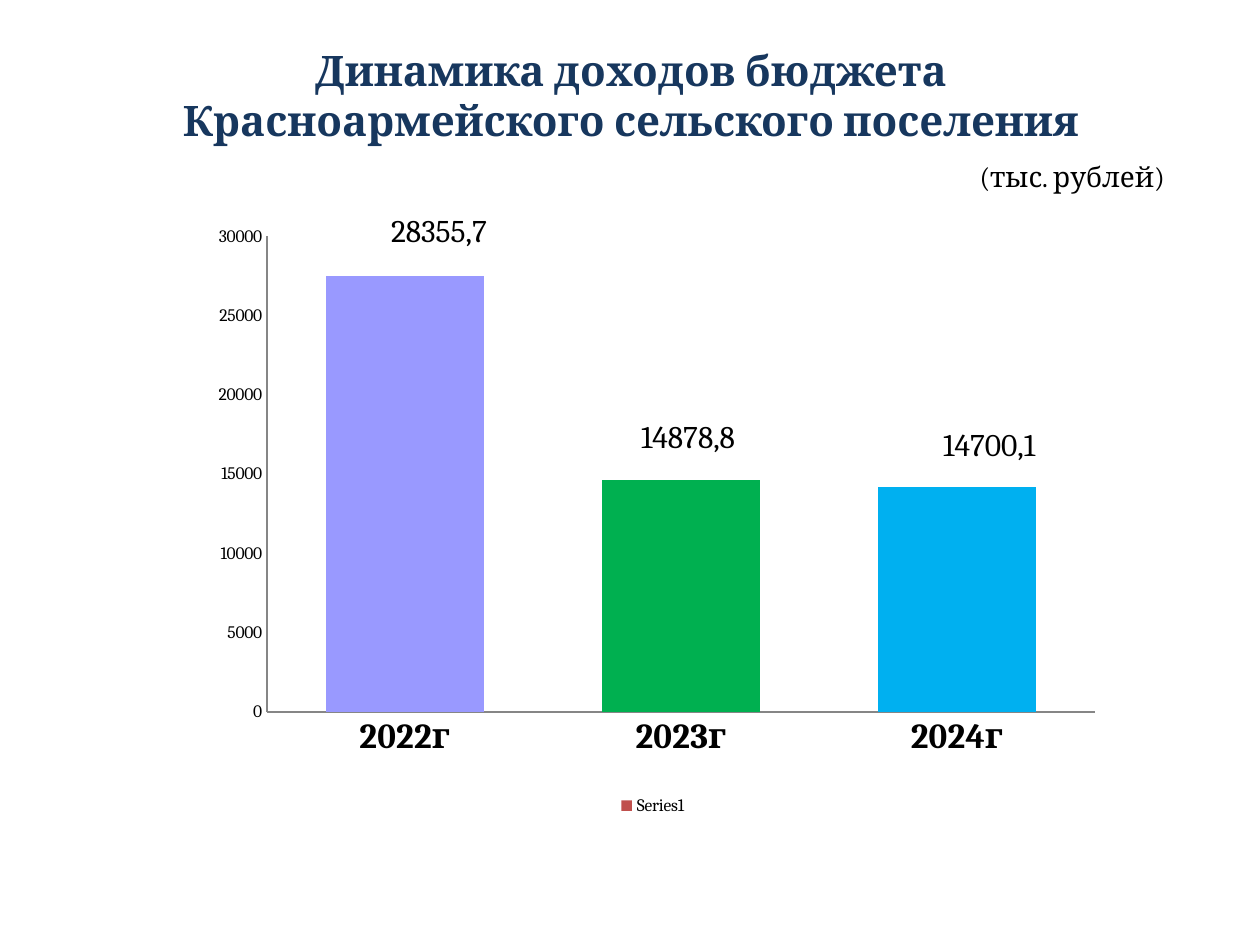
from lxml import etree
from pptx import Presentation
from pptx.chart.data import CategoryChartData
from pptx.dml.color import RGBColor
from pptx.enum.chart import XL_CHART_TYPE, XL_LABEL_POSITION, XL_LEGEND_POSITION, XL_TICK_MARK
from pptx.enum.text import MSO_ANCHOR, MSO_AUTO_SIZE, PP_ALIGN
from pptx.oxml.ns import qn
from pptx.util import Pt

COLUMN = XL_CHART_TYPE.COLUMN_CLUSTERED
OUTSIDE_END = XL_LABEL_POSITION.OUTSIDE_END
BOTTOM = XL_LEGEND_POSITION.BOTTOM
NO_TICK = XL_TICK_MARK.NONE
MIDDLE = MSO_ANCHOR.MIDDLE
NO_FIT = MSO_AUTO_SIZE.NONE
CENTER, RIGHT = PP_ALIGN.CENTER, PP_ALIGN.RIGHT

FONT = "Cambria"
NAVY = RGBColor(0x17, 0x37, 0x5E)
BLACK = RGBColor(0, 0, 0)
GREY = RGBColor(0x86, 0x86, 0x86)
RED = RGBColor(0xC0, 0x50, 0x4D)
VIOLET = RGBColor(0x99, 0x99, 0xFF)
GREEN = RGBColor(0x00, 0xB0, 0x50)
BLUE = RGBColor(0x00, 0xB0, 0xF0)

CHART_W, CHART_H = 893, 615

# Year, value, label text, bar colour, label shift in px
YEARS = [
    ("2022г", 27500, "28355,7", VIOLET, (34, -20)),
    ("2023г", 14600, "14878,8", GREEN, (7, -19)),
    ("2024г", 14200, "14700,1", BLUE, (32, -17)),
]


def px(n):
    return round(n * 914400 / 126)


def style_font(font, size, color=BLACK, bold=False):
    font.name = FONT
    font.size = Pt(size)
    font.bold = bold
    font.color.rgb = color


def write(p, text, size, color=BLACK, bold=False, align=CENTER, before=0):
    p.text = text
    p.alignment = align
    p.space_before = Pt(before)
    for r in p.runs:
        style_font(r.font, size, color, bold)


def chart_layout(x, y, w=None, h=None, **modes):
    """Manual layout from px lengths, stored as shares of the chart."""
    values = dict(modes, x=x / CHART_W, y=y / CHART_H)
    if w and h:
        values.update(w=w / CHART_W, h=h / CHART_H)
    layout = etree.Element(qn("c:layout"))
    manual = etree.SubElement(layout, qn("c:manualLayout"))
    for tag, value in values.items():
        etree.SubElement(manual, qn(f"c:{tag}")).set("val", str(value))
    return layout


def add_title(slide):
    title = slide.shapes.title
    title.left, title.top, title.width, title.height = px(64), px(55), px(1134), px(127)
    tf = title.text_frame
    tf.word_wrap = True
    tf.auto_size = NO_FIT
    tf.vertical_anchor = MIDDLE
    tf.margin_left = tf.margin_right = px(33)
    write(tf.paragraphs[0], "Динамика доходов бюджета\vКрасноармейского сельского поселения",
          24, color=NAVY, bold=True)
    write(tf.add_paragraph(), "(тыс. рублей)", 16, align=RIGHT, before=8)


def format_axis(axis, size, bold=False):
    axis.has_major_gridlines = False
    axis.major_tick_mark = axis.minor_tick_mark = NO_TICK
    axis.format.line.color.rgb = GREY
    axis.format.line.width = Pt(0.75)
    style_font(axis.tick_labels.font, size, bold=bold)


def format_bar(point, text, color):
    point.format.fill.solid()
    point.format.fill.fore_color.rgb = color
    label = point.data_label
    write(label.text_frame.paragraphs[0], text, 18)
    label.position = OUTSIDE_END


def add_income_chart(slide):
    data = CategoryChartData()
    data.categories = [year[0] for year in YEARS]
    data.add_series("Series1", [year[1] for year in YEARS])
    chart = slide.shapes.add_chart(COLUMN, px(203), px(214), px(CHART_W), px(CHART_H), data).chart
    chart.has_title = False
    style_font(chart.font, 10)

    # Axes and legend
    format_axis(chart.category_axis, 20, bold=True)
    format_axis(chart.value_axis, 10)
    chart.value_axis.minimum_scale = 0
    chart.value_axis.maximum_scale = 30000
    chart.value_axis.major_unit = 5000
    chart.has_legend = True
    legend = chart.legend
    legend.position = BOTTOM
    legend.include_in_layout = False
    style_font(legend.font, 10)
    root = chart.element
    for old in root.findall(".//" + qn("c:legend") + "/" + qn("c:layout")):
        old.getparent().remove(old)
    root.find(".//" + qn("c:legendPos")).addnext(
        chart_layout(413, 577, xMode="edge", yMode="edge"))

    # Bars and their labels
    plot = chart.plots[0]
    plot.gap_width = 75
    plot.vary_by_categories = False
    series = plot.series[0]
    series.format.fill.solid()
    series.format.fill.fore_color.rgb = RED
    for i, (_, _, text, color, _) in enumerate(YEARS):
        format_bar(series.points[i], text, color)
    for label, year in zip(root.iter(qn("c:dLbl")), YEARS):
        label.find(qn("c:idx")).addnext(chart_layout(*year[4]))
    for leader in root.iter(qn("c:showLeaderLines")):
        leader.set("val", "0")

    # Plot area
    area = root.find(".//" + qn("c:plotArea"))
    for old in area.findall(qn("c:layout")):
        area.remove(old)
    area.insert(0, chart_layout(64, 22, 829, 476,
                                layoutTarget="inner", xMode="edge", yMode="edge"))


def main():
    prs = Presentation()
    prs.slide_width, prs.slide_height = px(1260), px(945)
    slide = prs.slides.add_slide(prs.slide_layouts[5])
    add_title(slide)
    add_income_chart(slide)
    prs.save("out.pptx")


if __name__ == "__main__":
    main()
